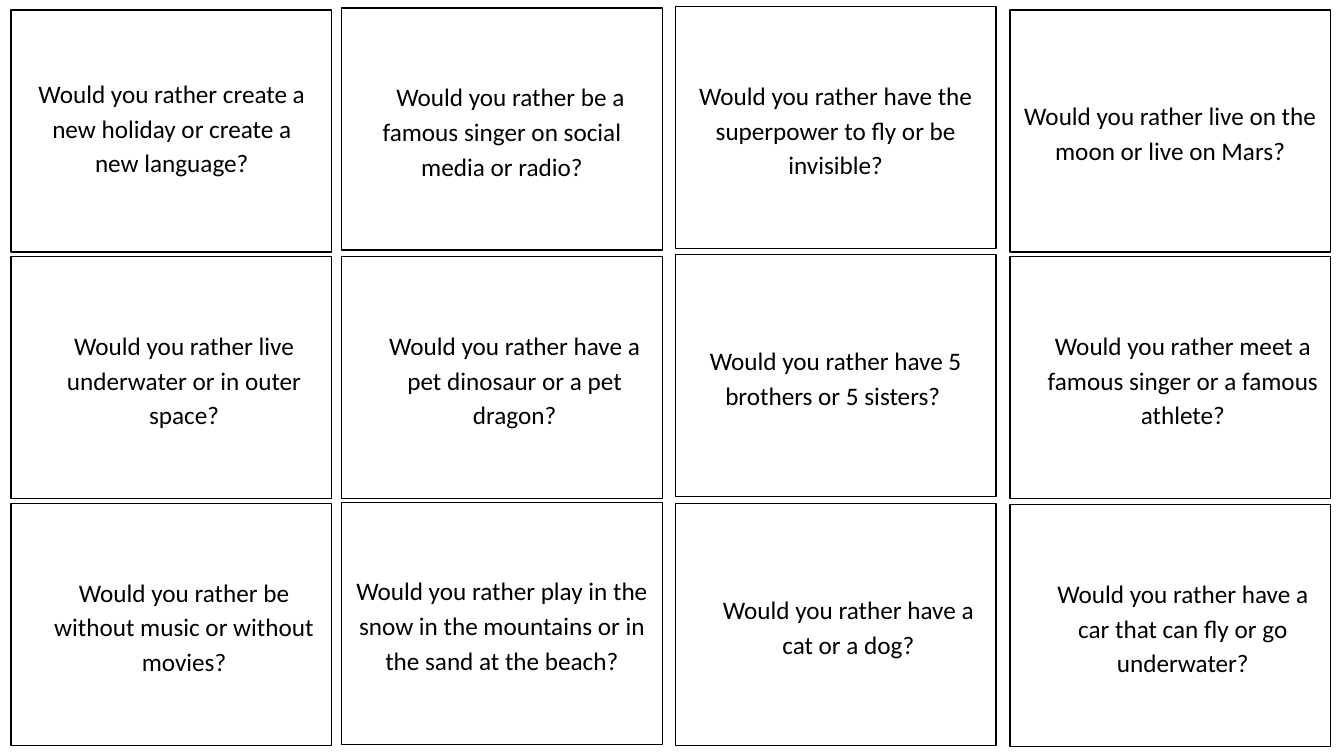
from pptx import Presentation
from pptx.dml.color import RGBColor
from pptx.enum.shapes import MSO_SHAPE
from pptx.enum.text import MSO_ANCHOR, MSO_AUTO_SIZE, PP_ALIGN
from pptx.util import Cm, Pt

RECT = MSO_SHAPE.RECTANGLE
MIDDLE = MSO_ANCHOR.MIDDLE
GROW = MSO_AUTO_SIZE.SHAPE_TO_FIT_TEXT
CENTER = PP_ALIGN.CENTER

COLORS = {"paper": "FFFFFF", "ink": "000000"}
LEFTS = (0.28, 8.61, 17.02, 25.45)
TOP, ROW_PITCH = 0.25, 6.22
CARD_W, CARD_H = 8.08, 6.1
MARGIN = 0.64

# Each card: question, vertical nudge, paragraph format
CARDS = (
    (
        (None, 0, {}),
        ("Would you rather be a famous singer on social media or radio?", -0.05, {"indent": 0.43}),
        ("Would you rather have the superpower to fly or be invisible?", -0.08, {}),
        ("Would you rather live on the moon or live on Mars?", 0, {}),
    ),
    (
        ("Would you rather live underwater or in outer space?", 0, {"margin": MARGIN}),
        ("Would you rather have a pet dinosaur or a pet dragon?", 0, {"margin": MARGIN}),
        ("Would you rather have 5 brothers or 5 sisters? ", -0.05, {}),
        ("Would you rather meet a famous singer or a famous athlete?", 0, {"margin": MARGIN}),
    ),
    (
        ("Would you rather be without music or without movies?", 0, {"margin": MARGIN}),
        ("Would you rather play in the snow in the mountains or in the sand at the beach?", -0.03, {}),
        ("Would you rather have a cat or a dog?", 0, {"margin": MARGIN}),
        ("Would you rather have a car that can fly or go underwater?", 0.03, {"margin": MARGIN}),
    ),
)


def color(name):
    return RGBColor.from_string(COLORS[name])


def write(tf, text, font="Calibri", size=18, ink="ink", margin=0, indent=0):
    tf.word_wrap = True
    p = tf.paragraphs[0]
    p.alignment = CENTER
    p.line_spacing = 1.15
    pPr = p._p.get_or_add_pPr()
    pPr.set("marL", str(Cm(margin)))
    pPr.set("indent", str(Cm(indent)))
    r = p.add_run()
    r.text = text
    r.font.name = font
    r.font.size = Pt(size)
    r.font.color.rgb = color(ink)


class CardSheet:
    """Draws bordered question cards on one slide."""

    def __init__(self, slide):
        self.s = slide
        self.line_width = Pt(1)

    def card(self, left, top, text=None, **fmt):
        sp = self.s.shapes.add_shape(RECT, Cm(left), Cm(top), Cm(CARD_W), Cm(CARD_H))
        sp.shadow.inherit = False
        sp.fill.solid()
        sp.fill.fore_color.rgb = color("paper")
        sp.line.color.rgb = color("ink")
        sp.line.width = self.line_width
        if text:
            sp.text_frame.vertical_anchor = MIDDLE
            write(sp.text_frame, text, **fmt)

    def label(self, left, top, width, height, text, **fmt):
        sp = self.s.shapes.add_textbox(Cm(left), Cm(top), Cm(width), Cm(height))
        sp.text_frame.auto_size = GROW
        write(sp.text_frame, text, **fmt)


def main():
    prs = Presentation()
    prs.slide_width, prs.slide_height = Cm(33.87), Cm(19.05)
    sheet = CardSheet(prs.slides.add_slide(prs.slide_layouts[6]))
    for row, cards in enumerate(CARDS):
        for left, (text, nudge, fmt) in zip(LEFTS, cards):
            sheet.card(left, TOP + row * ROW_PITCH + nudge, text, **fmt)
    sheet.label(0.56, 1.73, 7.54, 2.87,
                "Would you rather create a new holiday or create a new language?")
    prs.save("out.pptx")


if __name__ == "__main__":
    main()
